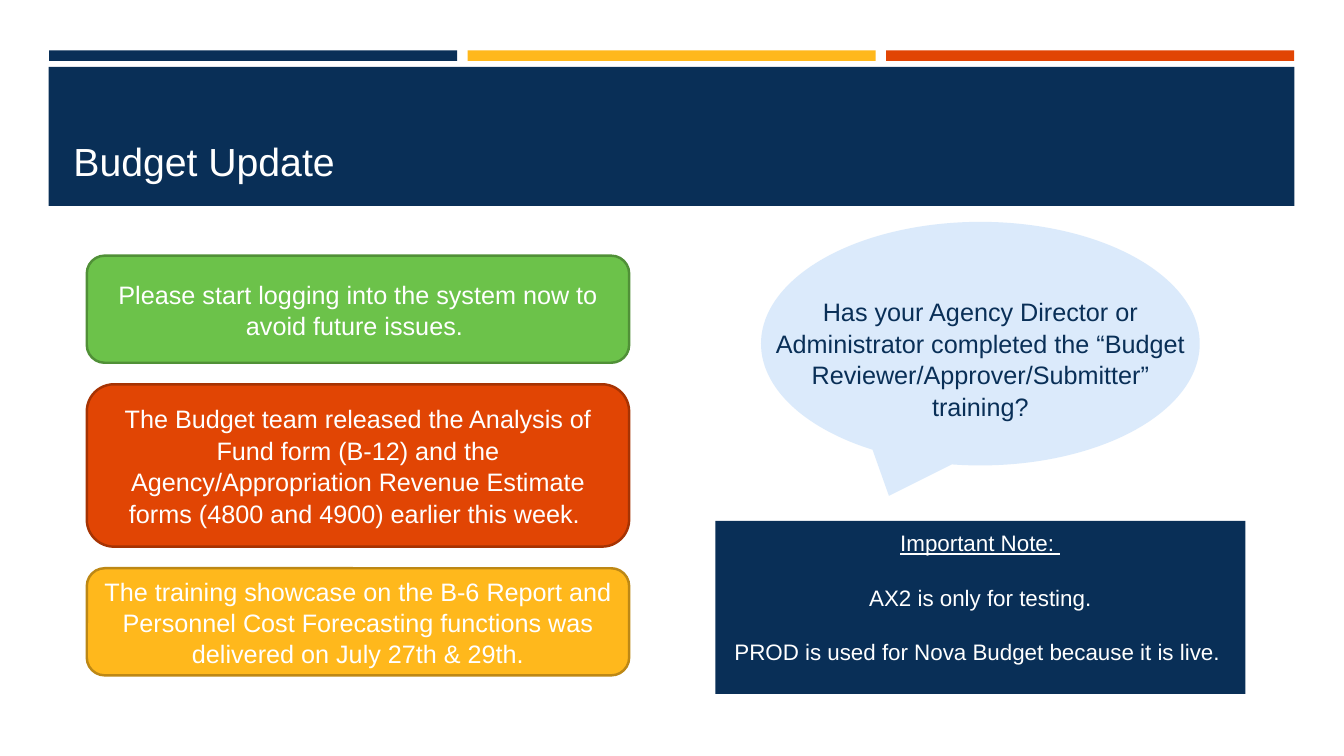
"""Build the Budget Update slide."""
from lxml import etree
from pptx import Presentation
from pptx.dml.color import RGBColor
from pptx.enum import shapes, text
from pptx.oxml import ns
from pptx.util import Pt

NAVY = RGBColor(0x09, 0x2F, 0x57)
ORANGE = RGBColor(0xE1, 0x45, 0x04)
DARK_ORANGE = RGBColor(0xA6, 0x33, 0x03)
GOLD = RGBColor(0xFF, 0xB8, 0x1C)
DARK_GOLD = RGBColor(0xBD, 0x88, 0x15)
GREEN = RGBColor(0x6C, 0xC2, 0x4A)
DARK_GREEN = RGBColor(0x50, 0x90, 0x37)
SKY = RGBColor(0xA1, 0xCA, 0xF5)
WHITE = RGBColor(0xFF, 0xFF, 0xFF)

SHAPE = shapes.MSO_SHAPE
TOP, MIDDLE, BOTTOM = text.MSO_ANCHOR.TOP, text.MSO_ANCHOR.MIDDLE, text.MSO_ANCHOR.BOTTOM
LEFT, CENTER = text.PP_ALIGN.LEFT, text.PP_ALIGN.CENTER


class SlideBuilder:
    """Hold the text style and the slide being filled."""

    font_name = "Arial"
    line_spacing = 1.04

    def __init__(self, slide):
        self.slide = slide

    def block(self, kind, box, fill, line=None, opacity=None):
        """Add a filled preset shape."""
        shape = self.slide.shapes.add_shape(kind, *map(Pt, box))
        shape.shadow.inherit = False
        shape.fill.solid()
        shape.fill.fore_color.rgb = fill
        if line is None:
            shape.line.fill.background()
        else:
            shape.line.color.rgb = line
            shape.line.width = Pt(1.75)
        if opacity is not None:
            color = shape.element.spPr.find(".//" + ns.qn("a:srgbClr"))
            etree.SubElement(color, ns.qn("a:alpha"), val=str(opacity * 1000))
        return shape

    def fill_text(self, shape, lines, size, color=WHITE, anchor=MIDDLE, align=CENTER, gap=0):
        """Put one paragraph per line into a shape."""
        frame = shape.text_frame
        frame.word_wrap = True
        frame.vertical_anchor = anchor
        frame.text = "\n".join(lines)
        for index, paragraph in enumerate(frame.paragraphs):
            layout = {"alignment": align, "line_spacing": self.line_spacing,
                      "space_before": Pt(gap if index else 0)}
            for name, value in layout.items():
                setattr(paragraph, name, value)
            font = paragraph.runs[0].font
            for name, value in {"name": self.font_name, "size": Pt(size)}.items():
                setattr(font, name, value)
            font.color.rgb = color
        return frame

    def label(self, box, line, size, **style):
        """Add a text box with a single paragraph."""
        shape = self.slide.shapes.add_textbox(*map(Pt, box))
        return self.fill_text(shape, [line], size, **style)


def main():
    """Compose the slide and save it."""
    presentation = Presentation()
    presentation.slide_width, presentation.slide_height = Pt(960), Pt(540)
    builder = SlideBuilder(presentation.slides.add_slide(presentation.slide_layouts[6]))

    for column, color in enumerate((NAVY, GOLD, ORANGE)):
        builder.block(SHAPE.RECTANGLE, (35 + column * 299, 36, 291.5, 7.5), color)
    builder.block(SHAPE.RECTANGLE, (34.8, 47.7, 889.7, 99.3), NAVY)
    builder.label((45.4, 57.6, 868.3, 77.8), "Budget Update", 28, anchor=BOTTOM, align=LEFT)

    updates = (
        (76.5, GREEN, DARK_GREEN,
         "Please start logging into the system now to avoid future issues. "),
        (116, ORANGE, DARK_ORANGE,
         "The Budget team released the Analysis of Fund form (B-12) and the "
         "Agency/Appropriation Revenue Estimate forms (4800 and 4900) earlier this week. "),
        (76.5, GOLD, DARK_GOLD,
         "The training showcase on the B-6 Report and Personnel Cost Forecasting "
         "functions was delivered on July 27th & 29th."),
    )
    top = 182.6
    for height, fill, line, message in updates:
        card = builder.block(SHAPE.ROUNDED_RECTANGLE, (62, top, 387.4, height), fill, line)
        builder.fill_text(card, [message], 18)
        top += height + 15.4

    builder.block(SHAPE.OVAL_CALLOUT, (543.6, 158.5, 313.4, 174), SKY, opacity=38)
    builder.label((543.6, 207.4, 313.4, 94.3),
                  "Has your Agency Director or Administrator completed the "
                  "“Budget Reviewer/Approver/Submitter” training?",
                  18, color=NAVY, anchor=TOP)

    note = builder.block(SHAPE.RECTANGLE, (511, 372.1, 378.5, 123.6), NAVY)
    frame = builder.fill_text(note, ["Important Note: ", "AX2 is only for testing.",
                                     "PROD is used for Nova Budget because it is live. "],
                              16, anchor=TOP, gap=19.1)
    frame.margin_top = Pt(5)
    frame.paragraphs[0].runs[0].font.underline = True

    presentation.save("out.pptx")


if __name__ == "__main__":
    main()
